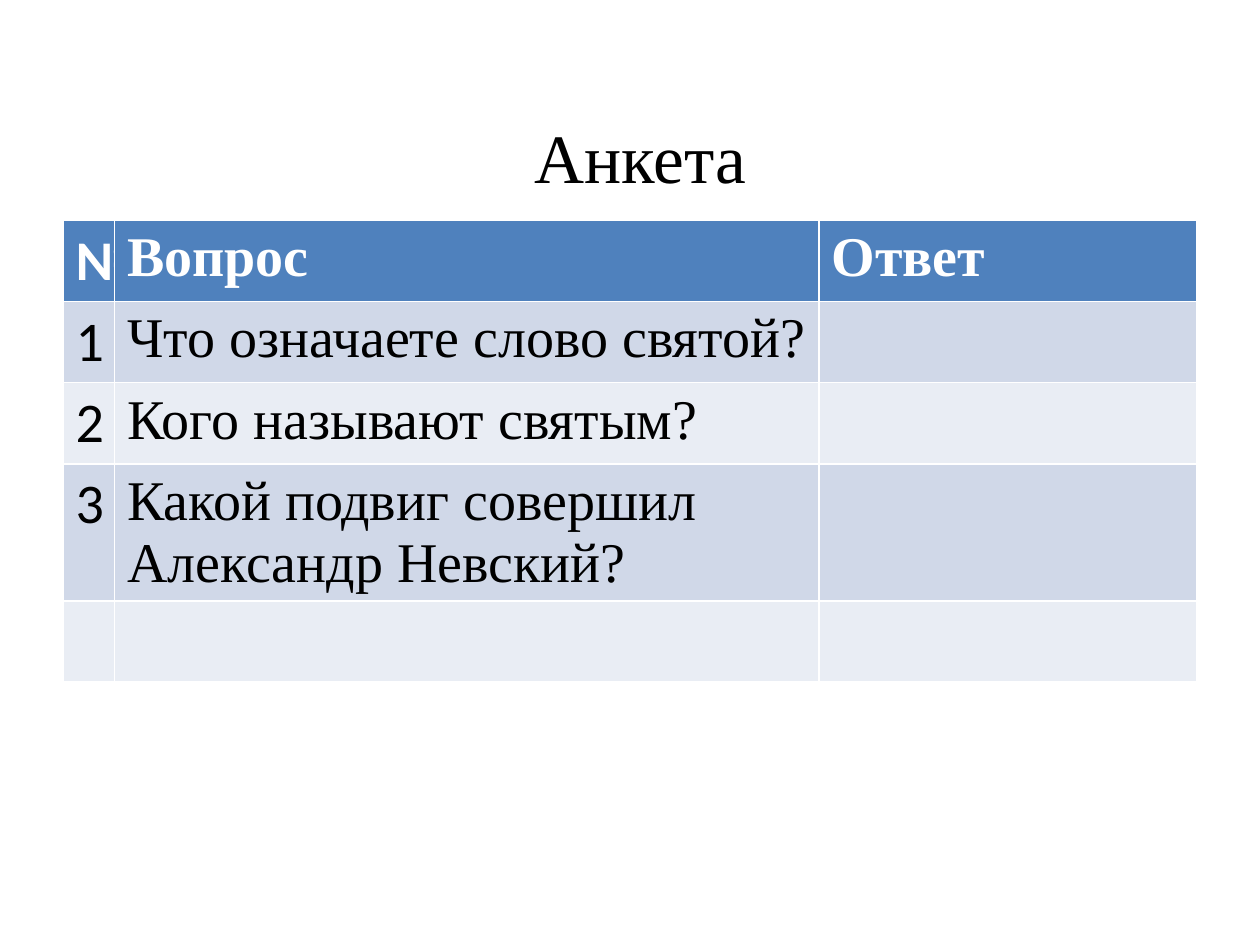
from dataclasses import dataclass

from pptx import Presentation
from pptx.dml.color import RGBColor
from pptx.enum.text import MSO_ANCHOR, PP_ALIGN
from pptx.util import Inches, Pt

WIDTH, HEIGHT = 10, 7.5
COLORS = {
    "header": "4F81BD",
    "odd": "D0D8E8",
    "even": "E9EDF4",
    "light": "FFFFFF",
    "dark": "000000",
}
SERIF, SANS = "Times New Roman", "Calibri"
COLUMN_WIDTHS = (0.41, 5.59, 3)
ROW_HEIGHT, TALL_ROW_HEIGHT = 0.64, 1.09


@dataclass(frozen=True)
class SurveyRow:
    number: str = ""
    question: str = ""
    answer: str = ""
    height: float = ROW_HEIGHT


ROWS = (
    SurveyRow("№", "Вопрос", "Ответ"),
    SurveyRow("1", "Что означаете слово святой?"),
    SurveyRow("2", "Кого называют святым?"),
    SurveyRow("3", "Какой подвиг совершил Александр Невский?", height=TALL_ROW_HEIGHT),
    SurveyRow(),
)


def add_run(paragraph, text: str, size: float, font: str, color: str, bold: bool = False) -> None:
    run = paragraph.add_run()
    run.text = text
    run.font.size = Pt(size)
    run.font.name = font
    run.font.bold = bold
    run.font.color.rgb = RGBColor.from_string(COLORS[color])


def format_title(title, text: str) -> None:
    title.left, title.top = Inches(0.67), Inches(0.92)
    title.width, title.height = Inches(8.83), Inches(0.64)
    frame = title.text_frame
    frame.word_wrap = True
    frame.vertical_anchor = MSO_ANCHOR.MIDDLE
    paragraph = frame.paragraphs[0]
    paragraph.alignment = PP_ALIGN.CENTER
    add_run(paragraph, text, 39.6, SERIF, "dark")


def add_survey_table(slide, rows: tuple[SurveyRow, ...]) -> None:
    total_height = sum(row.height for row in rows)
    table = slide.shapes.add_table(
        len(rows), len(COLUMN_WIDTHS),
        Inches(WIDTH * 0.05), Inches(1.75),
        Inches(sum(COLUMN_WIDTHS)), Inches(total_height),
    ).table
    for column, width in zip(table.columns, COLUMN_WIDTHS):
        column.width = Inches(width)
    for row_index, row in enumerate(rows):
        table.rows[row_index].height = Inches(row.height)
        is_header = row_index == 0
        fill = "header" if is_header else ("odd" if row_index % 2 else "even")
        for column_index, text in enumerate((row.number, row.question, row.answer)):
            cell = table.cell(row_index, column_index)
            cell.fill.solid()
            cell.fill.fore_color.rgb = RGBColor.from_string(COLORS[fill])
            if text:
                add_run(
                    cell.text_frame.paragraphs[0], text, 32,
                    SERIF if column_index else SANS,
                    "light" if is_header else "dark", is_header,
                )


def main() -> None:
    presentation = Presentation()
    presentation.slide_width, presentation.slide_height = Inches(WIDTH), Inches(HEIGHT)
    slide = presentation.slides.add_slide(presentation.slide_layouts[5])
    format_title(slide.shapes.title, "Анкета")
    add_survey_table(slide, ROWS)
    presentation.save("out.pptx")


if __name__ == "__main__":
    main()
